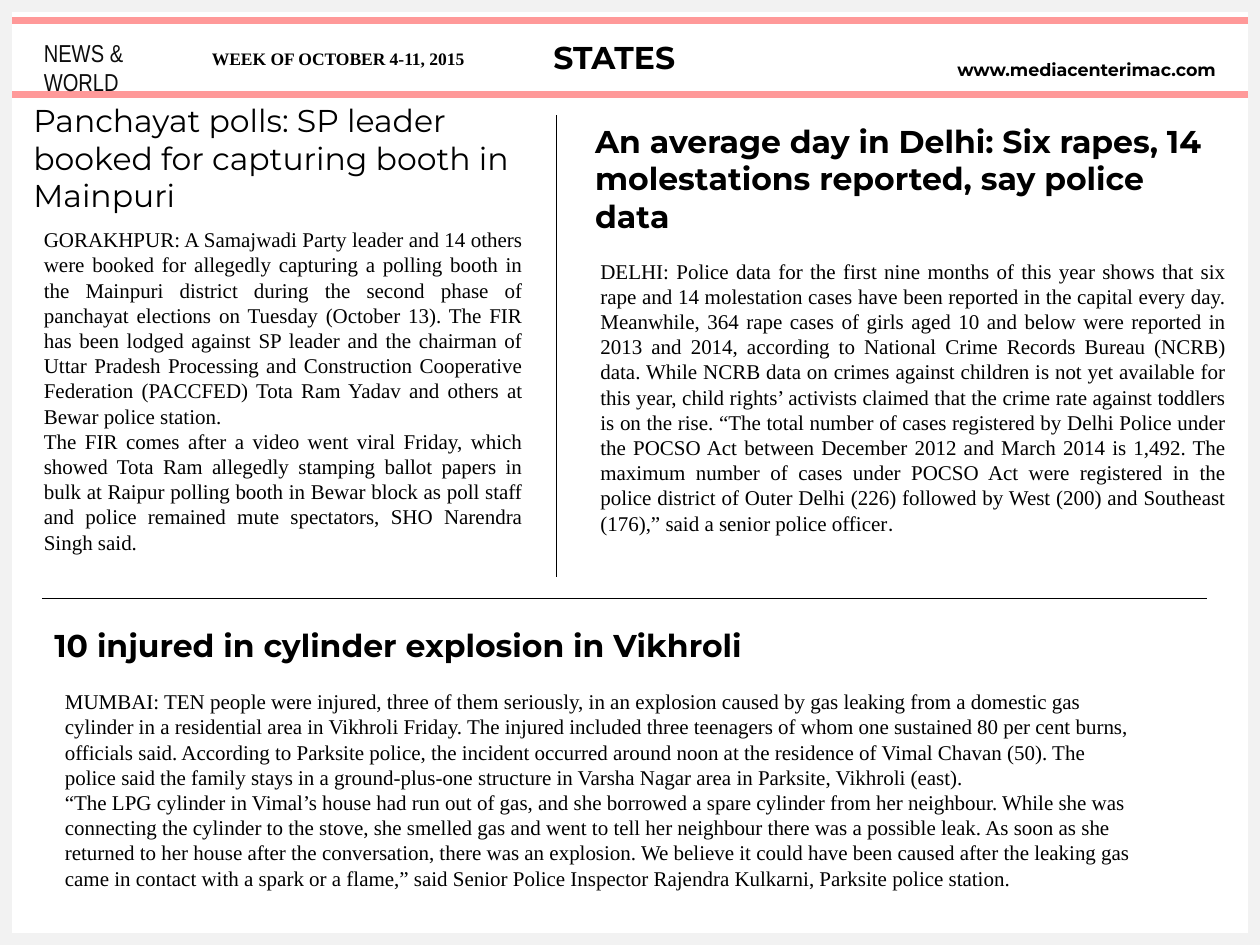
import pptx
import pptx.dml.color
import pptx.enum.shapes
import pptx.enum.text
import pptx.oxml
import pptx.oxml.ns
import pptx.util
from dataclasses import dataclass


@dataclass(frozen=True)
class Theme:
    ink: str = "000000"
    soft_ink: str = "0D0D0D"
    band: str = "FF9999"
    frame: str = "F2F2F2"
    display: str = "Montserrat"
    serif: str = "Times New Roman"
    narrow: str = "Arial Narrow"
    sans: str = "Calibri"
    headline: int = 18
    name: int = 14
    body: int = 12
    small: int = 10


theme = Theme()
ALIGN = pptx.enum.text.PP_ALIGN
RGB = pptx.dml.color.RGBColor.from_string

newspaper = pptx.Presentation()
newspaper.slide_width = pptx.util.Inches(10)
newspaper.slide_height = pptx.util.Inches(7.5)
page = newspaper.slides.add_slide(newspaper.slide_layouts[6])

# The page is a grid of 120 columns by 90 rows
COLUMNS, ROWS = 120, 90
cell = newspaper.slide_width / COLUMNS


def place(*cells):
    return [pptx.util.Emu(round(count * cell)) for count in cells]


def write(area, paragraphs, size, font, bold=False, align=ALIGN.LEFT,
          color=theme.ink, wrap=True):
    """Each paragraph is a list of (text, font) runs or a plain string."""
    frame = page.shapes.add_textbox(*place(*area)).text_frame
    frame.word_wrap = wrap
    frame.auto_size = pptx.enum.text.MSO_AUTO_SIZE.SHAPE_TO_FIT_TEXT
    for index, content in enumerate(paragraphs):
        paragraph = frame.add_paragraph() if index else frame.paragraphs[0]
        paragraph.alignment = align
        runs = [(content, font)] if isinstance(content, str) else content
        for text, face in runs:
            run = paragraph.add_run()
            run.text = text
            run.font.name = face
            run.font.size = pptx.util.Pt(size)
            run.font.bold = bold
            run.font.color.rgb = RGB(color)


# Masthead band and page frame, outlines only
for area, color, weight in [
    ((0, 2, COLUMNS, 7), theme.band, 4),
    ((0, 0, COLUMNS, ROWS), theme.frame, 13.25),
]:
    outline = page.shapes.add_shape(
        pptx.enum.shapes.MSO_SHAPE.RECTANGLE, *place(*area))
    outline.shadow.inherit = False
    outline.fill.background()
    outline.line.color.rgb = RGB(color)
    outline.line.width = pptx.util.Pt(weight)

# Masthead text
write((39, 3, 39, 8.5), ["STATES"], theme.headline, theme.display,
      bold=True, align=ALIGN.CENTER)
write((90, 5, 39, 3.2), ["www.mediacenterimac.com"], theme.small,
      theme.display, bold=True)
write((19, 4, 27, 3.2), ["WEEK OF OCTOBER 4-11, 2015"], theme.small,
      theme.serif, bold=True, wrap=False)
write((3, 3, 16.6, 4), ["NEWS & WORLD"], theme.name, theme.narrow,
      color=theme.soft_ink)

# Left story: Mainpuri
write((2, 9, 51, 12.1),
      ["Panchayat polls: SP leader booked for capturing booth in Mainpuri"],
      theme.headline, theme.display)
write((3, 21, 48, 35.2), [
    "GORAKHPUR: A Samajwadi Party leader and 14 others were booked for "
    "allegedly capturing a polling booth in the Mainpuri district during the "
    "second phase of panchayat elections on Tuesday (October 13). The FIR has "
    "been lodged against SP leader and the chairman of Uttar Pradesh "
    "Processing and Construction Cooperative Federation (PACCFED) Tota Ram "
    "Yadav and others at Bewar police station.",
    "The FIR comes after a video went viral Friday, which showed Tota Ram "
    "allegedly stamping ballot papers in bulk at Raipur polling booth in "
    "Bewar block as poll staff and police remained mute spectators, SHO "
    "Narendra Singh said.",
], theme.body, theme.serif, align=ALIGN.JUSTIFY)

# Right story: Delhi
write((55.5, 11, 62.4, 12.1),
      ["An average day in Delhi: Six rapes, 14 molestations reported, say "
       "police data"],
      theme.headline, theme.display, bold=True)
write((56, 24, 62, 30.2), [[
    ("DELHI: Police data for the first nine months of this year shows that "
     "six rape and 14 molestation cases have been reported in the capital "
     "every day. Meanwhile, 364 rape cases of girls aged 10 and below were "
     "reported in 2013 and 2014, according to National Crime Records Bureau "
     "(NCRB) data. While NCRB data on crimes against children is not yet "
     "available for this year, child rights’ activists claimed that the crime "
     "rate against toddlers is on the rise. “The total number of cases "
     "registered by Delhi Police under the POCSO Act between December 2012 "
     "and March 2014 is 1,492. The maximum number of cases under POCSO Act "
     "were registered in the police district of Outer Delhi (226) followed by "
     "West (200) and Southeast (176),” said a senior police officer",
     theme.serif),
    (".", theme.sans),
]], theme.body, theme.serif, align=ALIGN.JUSTIFY)

# Bottom story: Vikhroli
write((4, 59, 82, 4.8), ["10 injured in cylinder explosion in Vikhroli"],
      theme.headline, theme.display, bold=True)
write((5, 65, 104, 20.6), [
    "MUMBAI: TEN people were injured, three of them seriously, in an "
    "explosion caused by gas leaking from a domestic gas cylinder in a "
    "residential area in Vikhroli Friday. The injured included three "
    "teenagers of whom one sustained 80 per cent burns, officials said. "
    "According to Parksite police, the incident occurred around noon at the "
    "residence of Vimal Chavan (50). The police said the family stays in a "
    "ground-plus-one structure in Varsha Nagar area in Parksite, Vikhroli "
    "(east).",
    "“The LPG cylinder in Vimal’s house had run out of gas, and she borrowed "
    "a spare cylinder from her neighbour. While she was connecting the "
    "cylinder to the stove, she smelled gas and went to tell her neighbour "
    "there was a possible leak. As soon as she returned to her house after "
    "the conversation, there was an explosion. We believe it could have been "
    "caused after the leaking gas came in contact with a spark or a flame,” "
    "said Senior Police Inspector Rajendra Kulkarni, Parksite police station.",
], theme.body, theme.serif)

# Rules between the stories
for ends in [(53, 11, 53, 55), (4, 57, 115, 57)]:
    rule = page.shapes.add_connector(
        pptx.enum.shapes.MSO_CONNECTOR.STRAIGHT, *place(*ends))
    rule.line.color.rgb = RGB(theme.ink)
    rule.line.width = pptx.util.Pt(0.75)
    rule.element.spPr.append(pptx.oxml.parse_xml(
        f'<a:effectLst {pptx.oxml.ns.nsdecls("a")}/>'))

newspaper.save("out.pptx")
